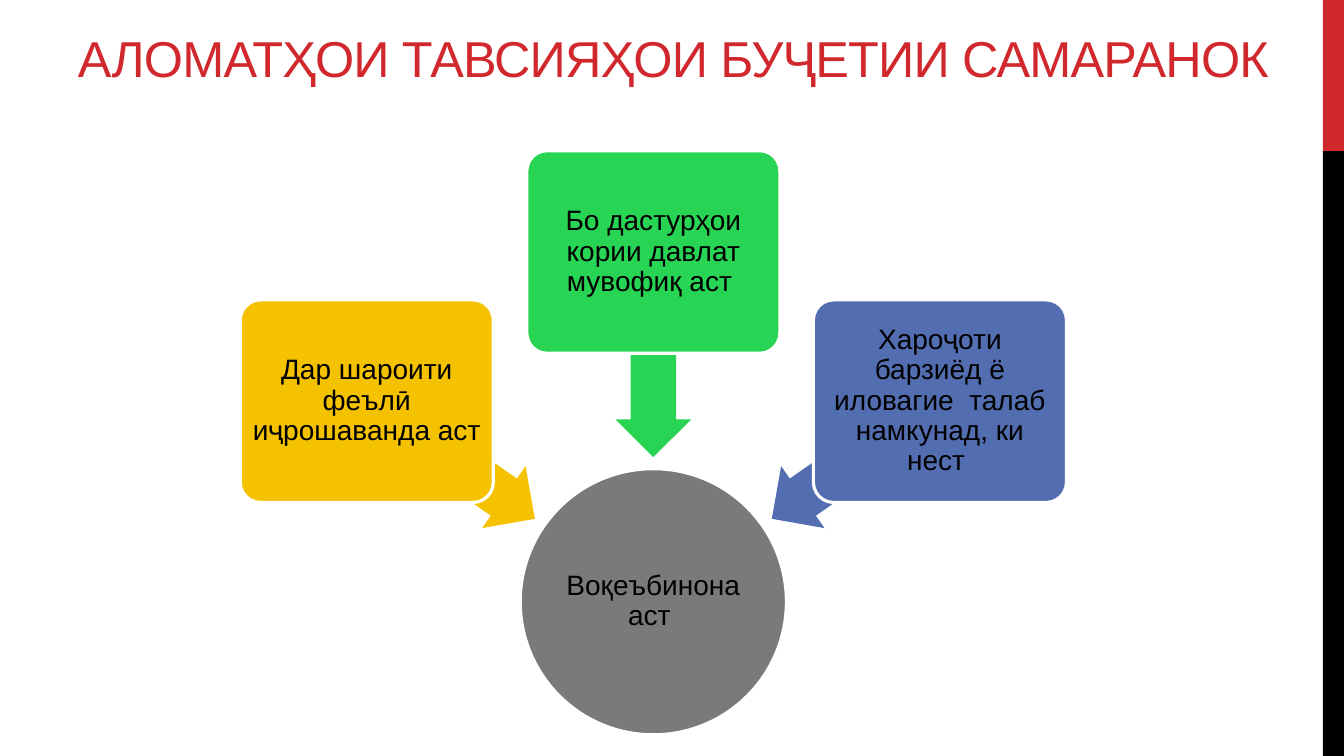
from math import cos, radians, sin

from pptx import Presentation
from pptx import util as u
from pptx.dml.color import RGBColor
from pptx.enum import shapes, text

RED, BLACK, WHITE, GREY = "D1282E", "000000", "FFFFFF", "7A7A7A"
HUB_X, HUB_Y, HUB_SIZE = 6.48, 5.97, 2.64
ARROW_RADIUS, BOX_RADIUS = 2.45, 3.47
TRAITS = [
    (215, "F5C201", "Дар шароити феълӣ иҷрошаванда аст "),
    (270, "28D453", "Бо дастурҳои кории давлат мувофиқ аст "),
    (325, "526DB0", "Хароҷоти барзиёд ё иловагие  талаб намкунад, ки нест "),
]


def colour(value):
    return RGBColor.from_string(value)


class TraitSlide:
    """Holds the style and the current slide, and draws each kind of element."""

    font_name = "Arial"
    label_size = 20
    title_size = 36

    def __init__(self, deck):
        self.slide = deck.slides.add_slide(deck.slide_layouts[5])

    def add_words(self, frame, words, size, ink, margins, anchor):
        frame.word_wrap = True
        frame.auto_size = text.MSO_AUTO_SIZE.NONE
        frame.vertical_anchor = anchor
        (frame.margin_left, frame.margin_top,
         frame.margin_right, frame.margin_bottom) = map(u.Inches, margins)
        paragraph = frame.paragraphs[0]
        paragraph.alignment = text.PP_ALIGN.CENTER
        paragraph.line_spacing = 0.9
        run = paragraph.add_run()
        run.text = words
        run.font.name = self.font_name
        run.font.size = u.Pt(size)
        run.font.color.rgb = colour(ink)
        return run

    def title(self, words, left, top, width, height):
        heading = self.slide.shapes.title
        heading.left, heading.top = u.Inches(left), u.Inches(top)
        heading.width, heading.height = u.Inches(width), u.Inches(height)
        run = self.add_words(heading.text_frame, words, self.title_size, RED,
                             (0, 0.05, 0, 0.62), text.MSO_ANCHOR.BOTTOM)
        run.font._element.set("spc", "-60")

    def block(self, preset, left, top, width, height, fill):
        block = self.slide.shapes.add_shape(
            preset, *map(u.Inches, (left, top, width, height)))
        block.shadow.inherit = False
        block.fill.solid()
        block.fill.fore_color.rgb = colour(fill)
        block.line.fill.background()
        return block

    def label(self, preset, x, y, width, height, fill, words, margin):
        label = self.block(preset, x - width / 2, y - height / 2, width, height, fill)
        label.line.color.rgb = colour(WHITE)
        label.line.width = u.Pt(2.25)
        self.add_words(label.text_frame, words, self.label_size, BLACK,
                       [margin] * 4, text.MSO_ANCHOR.MIDDLE)
        return label

    def hub(self, words):
        self.label(shapes.MSO_SHAPE.OVAL, HUB_X, HUB_Y, HUB_SIZE, HUB_SIZE,
                   GREY, words, 0.01)

    def trait(self, angle, fill, words):
        across, down = cos(radians(angle)), sin(radians(angle))
        width, height = 2.03, 0.75
        arrow = self.block(shapes.MSO_SHAPE.LEFT_ARROW,
                           HUB_X + ARROW_RADIUS * across - width / 2,
                           HUB_Y + ARROW_RADIUS * down - height / 2,
                           width, height, fill)
        arrow.adjustments[0], arrow.adjustments[1] = 0.6, 0.5
        arrow.rotation = angle
        box = self.label(shapes.MSO_SHAPE.ROUNDED_RECTANGLE,
                         HUB_X + BOX_RADIUS * across, HUB_Y + BOX_RADIUS * down,
                         2.51, 2.01, fill, words, 0.04)
        box.adjustments[0] = 0.1


def main():
    deck = Presentation()
    deck.slide_width, deck.slide_height = u.Inches(13.33), u.Inches(7.5)
    page = TraitSlide(deck)
    page.block(shapes.MSO_SHAPE.RECTANGLE, 13.12, 0, 0.21, 1.5, RED)
    page.block(shapes.MSO_SHAPE.RECTANGLE, 13.12, 1.5, 0.21, 6, BLACK)
    page.title("АЛОМАТҲОИ ТАВСИЯҲОИ БУҶЕТИИ САМАРАНОК", 0.64, 0, 12.08, 1.5)
    page.hub("Воқеъбинона аст ")
    for angle, fill, words in TRAITS:
        page.trait(angle, fill, words)
    deck.save("out.pptx")


if __name__ == "__main__":
    main()
